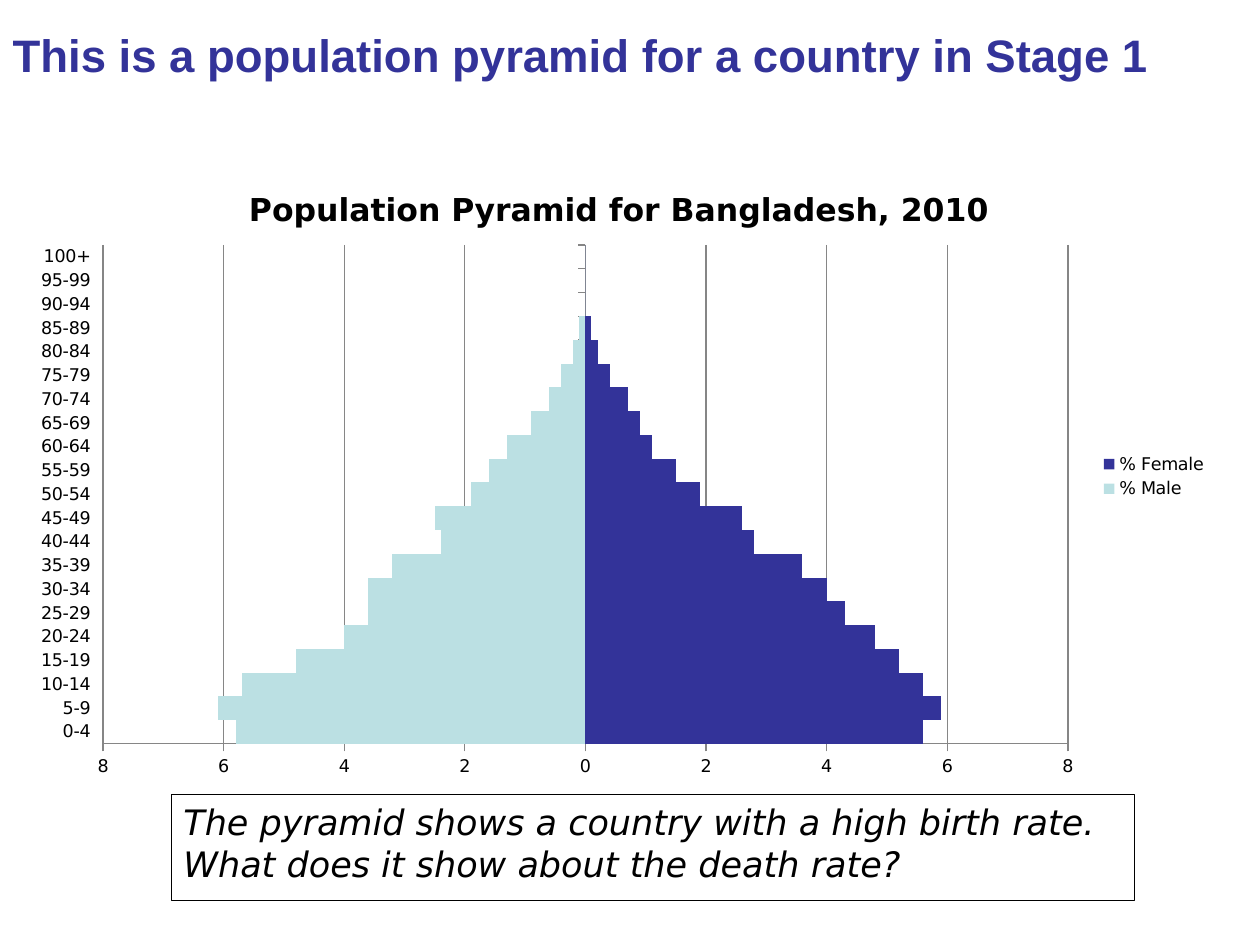
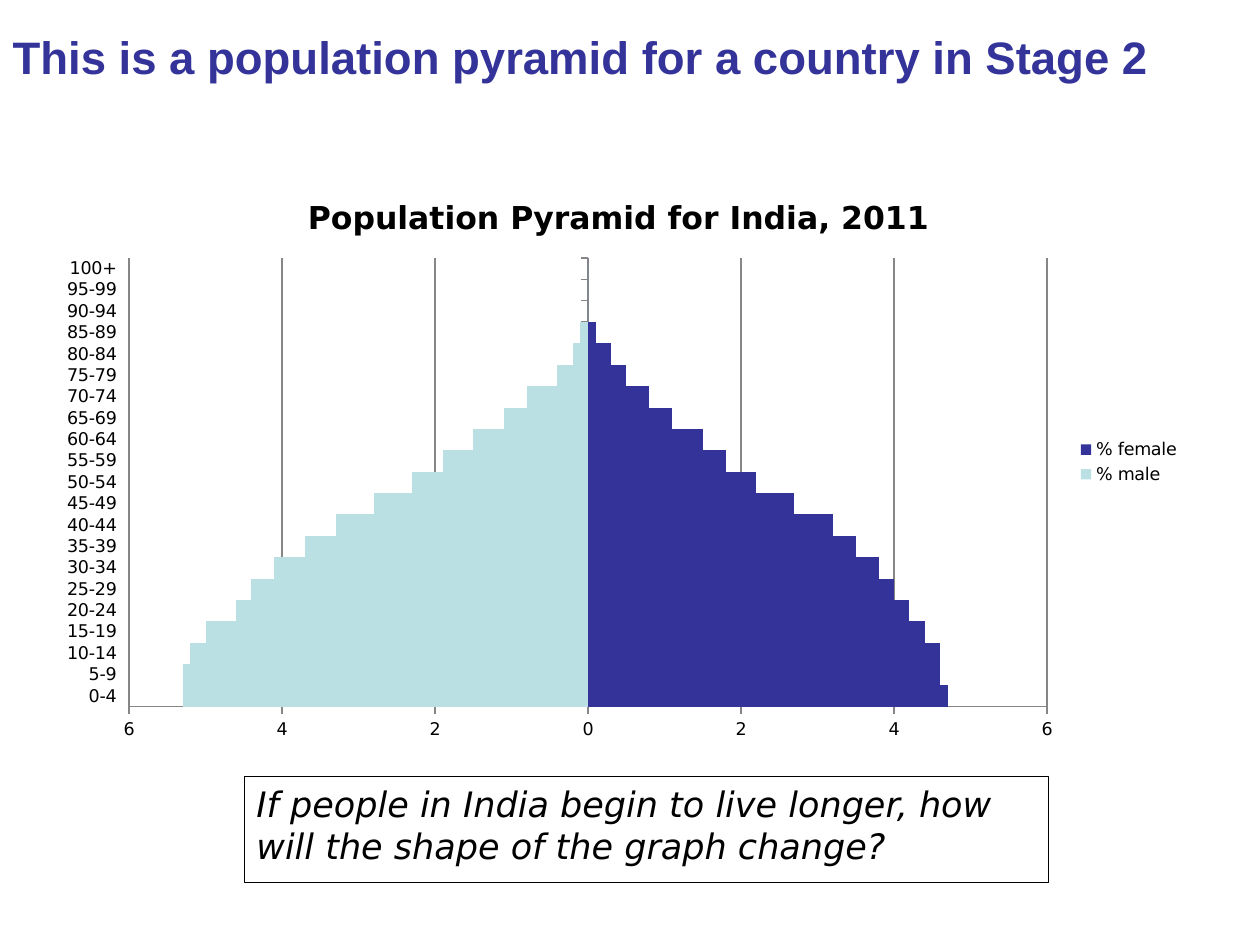
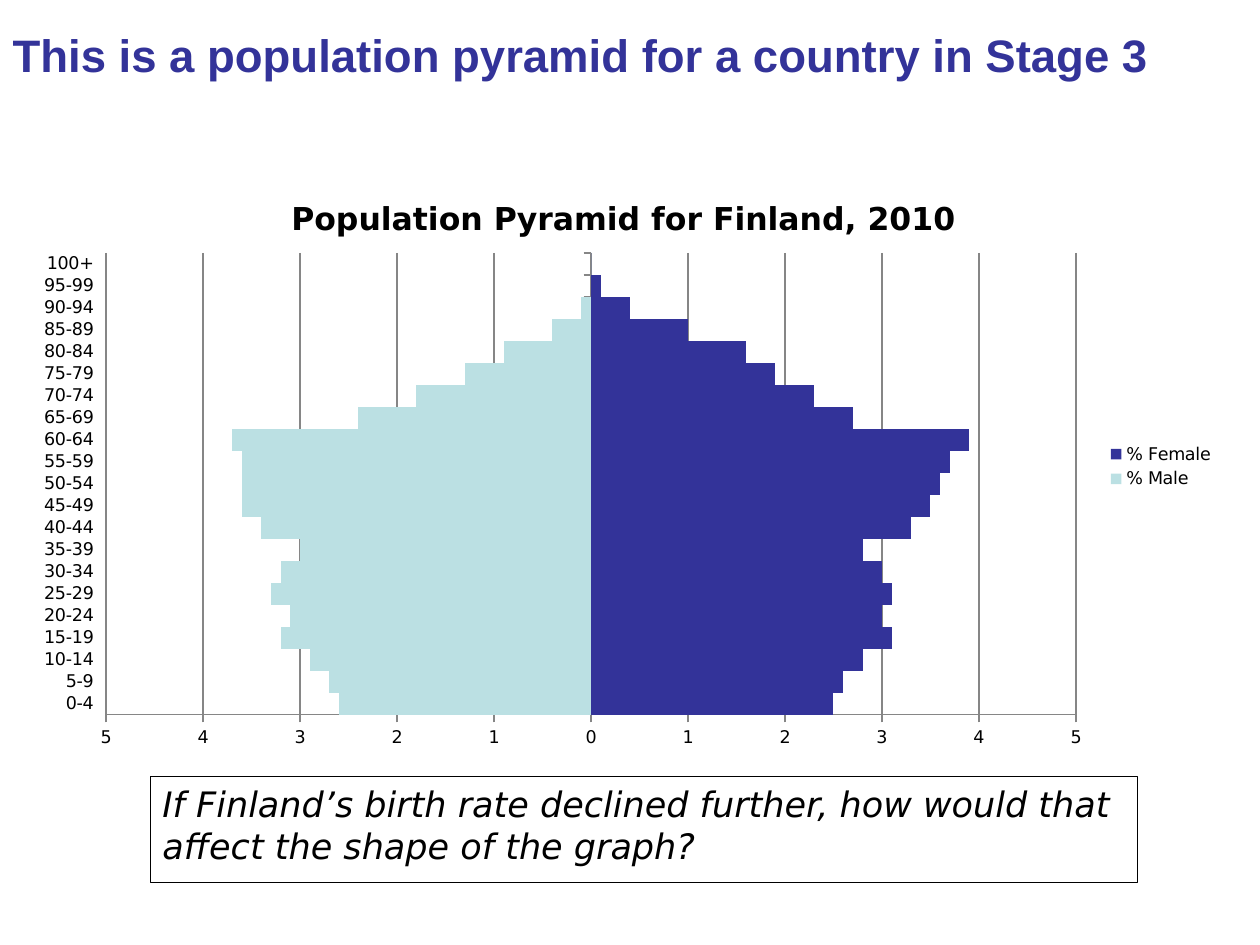
from pptx import Presentation
from pptx.chart.data import CategoryChartData
from pptx.dml.color import RGBColor
from pptx.enum.chart import XL_CHART_TYPE as ChartType, XL_LEGEND_POSITION as LegendPosition
from pptx.enum.chart import XL_TICK_LABEL_POSITION as LabelPosition, XL_TICK_MARK as TickMark
from pptx.enum.text import MSO_ANCHOR, MSO_AUTO_SIZE, PP_ALIGN
from pptx.oxml import parse_xml
from pptx.oxml.ns import nsdecls
from pptx.util import Inches, Pt

PX = Inches(1) / 126
NAVY = RGBColor(0x33, 0x33, 0x99)
PALE_BLUE = RGBColor(0xBB, 0xE0, 0xE3)
GRAY = RGBColor(0x86, 0x86, 0x86)
BLACK = RGBColor(0, 0, 0)
TITLE_FONT = "Arial"
BODY_FONT = "DejaVu Sans"

AGE_GROUPS = [f"{age}-{age + 4}" for age in range(0, 100, 5)] + ["100+"]

# Boxes are left, top, width, height in px; values run from the youngest group up
PYRAMIDS = [
    {
        "stage": 1, "title_top": 21, "place": "Bangladesh, 2010",
        "question": "The pyramid shows a country with a high birth rate. "
                    "What does it show about the death rate?",
        "question_box": (171, 794, 963, 106),
        "chart_box": (18, 164, 1202, 625), "plot_box": (103, 245, 965, 499),
        "limit": 8, "step": 2, "names": ("% Male", "% Female"),
        "male": [5.8, 6.1, 5.7, 4.8, 4, 3.6, 3.6, 3.2, 2.4, 2.5, 1.9,
                 1.6, 1.3, 0.9, 0.6, 0.4, 0.2, 0.1, 0, 0, 0],
        "female": [5.6, 5.9, 5.6, 5.2, 4.8, 4.3, 4, 3.6, 2.8, 2.6, 1.9,
                   1.5, 1.1, 0.9, 0.7, 0.4, 0.2, 0.1, 0, 0, 0],
    },
    {
        "stage": 2, "title_top": 23, "place": "India, 2011",
        "question": "If people in India begin to live longer, "
                    "how will the shape of the graph change?",
        "question_box": (244, 776, 805, 107),
        "chart_box": (44, 173, 1149, 578), "plot_box": (129, 258, 918, 449),
        "limit": 6, "step": 2, "names": ("% male", "% female"),
        "male": [5.3, 5.3, 5.2, 5, 4.6, 4.4, 4.1, 3.7, 3.3, 2.8, 2.3,
                 1.9, 1.5, 1.1, 0.8, 0.4, 0.2, 0.1, 0, 0, 0],
        "female": [4.7, 4.6, 4.6, 4.4, 4.2, 4, 3.8, 3.5, 3.2, 2.7, 2.2,
                   1.8, 1.5, 1.1, 0.8, 0.5, 0.3, 0.1, 0, 0, 0],
    },
    {
        "stage": 3, "title_top": 21, "place": "Finland, 2010",
        "question": "If Finland’s birth rate declined further, "
                    "how would that affect the shape of the graph?",
        "question_box": (150, 776, 987, 107),
        "chart_box": (20, 174, 1207, 585), "plot_box": (106, 253, 970, 462),
        "limit": 5, "step": 1, "names": ("% Male", "% Female"),
        "male": [2.6, 2.7, 2.9, 3.2, 3.1, 3.3, 3.2, 3, 3.4, 3.6, 3.6,
                 3.6, 3.7, 2.4, 1.8, 1.3, 0.9, 0.4, 0.1, 0, 0],
        "female": [2.5, 2.6, 2.8, 3.1, 3, 3.1, 3, 2.8, 3.3, 3.5, 3.6,
                   3.7, 3.9, 2.7, 2.3, 1.9, 1.6, 1, 0.4, 0.1, 0],
    },
]


def emu(box):
    return [round(length * PX) for length in box]


def set_font(font, name, size, color, bold=False, italic=False):
    font.name, font.size, font.bold, font.italic = name, Pt(size), bold, italic
    font.color.rgb = color


presentation = Presentation()
presentation.slide_width, presentation.slide_height = emu((1260, 945))

for pyramid in PYRAMIDS:
    slide = presentation.slides.add_slide(presentation.slide_layouts[5])

    # Title
    title = slide.shapes.title
    title.left, title.top, title.width, title.height = emu((0, pyramid["title_top"], 1260, 108))
    title.text_frame.auto_size = MSO_AUTO_SIZE.NONE
    title.text_frame.vertical_anchor = MSO_ANCHOR.TOP
    title.text_frame.text = f"This is a population pyramid for a country in Stage {pyramid['stage']}"
    paragraph = title.text_frame.paragraphs[0]
    paragraph.alignment = PP_ALIGN.LEFT
    set_font(paragraph.font, TITLE_FONT, 26, NAVY, bold=True)

    # Question
    question = slide.shapes.add_textbox(*emu(pyramid["question_box"]))
    question.line.color.rgb = BLACK
    question.line.width = Pt(0.5)
    question.text_frame.word_wrap = True
    question.text_frame.text = pyramid["question"]
    set_font(question.text_frame.paragraphs[0].font, BODY_FONT, 20, BLACK, italic=True)

    # Chart: men count to the left of zero
    male_name, female_name = pyramid["names"]
    chart_data = CategoryChartData()
    chart_data.categories = AGE_GROUPS
    chart_data.add_series(male_name, [-share for share in pyramid["male"]])
    chart_data.add_series(female_name, pyramid["female"])
    chart = slide.shapes.add_chart(
        ChartType.BAR_CLUSTERED, *emu(pyramid["chart_box"]), chart_data).chart
    set_font(chart.font, BODY_FONT, 10, BLACK)
    chart.has_title = True
    chart.chart_title.include_in_layout = False
    chart.chart_title.text_frame.text = f"Population Pyramid for {pyramid['place']}"
    set_font(chart.chart_title.text_frame.paragraphs[0].font, BODY_FONT, 18, BLACK, bold=True)
    chart.has_legend = True
    chart.legend.position = LegendPosition.RIGHT
    chart.legend.include_in_layout = False

    # Bars
    plot = chart.plots[0]
    plot.gap_width = 0
    plot.overlap = 100
    plot.vary_by_categories = False
    for series, color in zip(plot.series, (PALE_BLUE, NAVY)):
        series.invert_if_negative = False
        series.format.fill.solid()
        series.format.fill.fore_color.rgb = color

    # Axes
    age_axis, share_axis = chart.category_axis, chart.value_axis
    for axis in (age_axis, share_axis):
        axis.major_tick_mark = TickMark.OUTSIDE
        axis.minor_tick_mark = TickMark.NONE
        axis.tick_label_position = LabelPosition.LOW
        axis.format.line.color.rgb = GRAY
    age_axis.has_major_gridlines = False
    label_skip = parse_xml(f'<c:tickLblSkip {nsdecls("c")} val="1"/>')
    age_axis._element.find("{*}noMultiLvlLbl").addprevious(label_skip)
    share_axis.minimum_scale = -pyramid["limit"]
    share_axis.maximum_scale = pyramid["limit"]
    share_axis.major_unit = pyramid["step"]
    share_axis.has_major_gridlines = True
    share_axis.major_gridlines.format.line.color.rgb = GRAY
    share_axis.tick_labels.number_format = "0;0"
    share_axis.tick_labels.number_format_is_linked = False

    # Plot area as fractions of the chart
    chart_left, chart_top, chart_width, chart_height = pyramid["chart_box"]
    left, top, width, height = pyramid["plot_box"]
    fractions = {"x": (left - chart_left) / chart_width, "y": (top - chart_top) / chart_height,
                 "w": width / chart_width, "h": height / chart_height}
    modes = '<c:layoutTarget val="inner"/><c:xMode val="edge"/><c:yMode val="edge"/>'
    sizes = "".join(f'<c:{key} val="{value:.4f}"/>' for key, value in fractions.items())
    plot_area = chart._chartSpace.chart.plotArea
    for layout in plot_area.findall("{*}layout"):
        plot_area.remove(layout)
    plot_area.insert(0, parse_xml(
        f'<c:layout {nsdecls("c")}><c:manualLayout>{modes}{sizes}</c:manualLayout></c:layout>'))

presentation.save("out.pptx")
